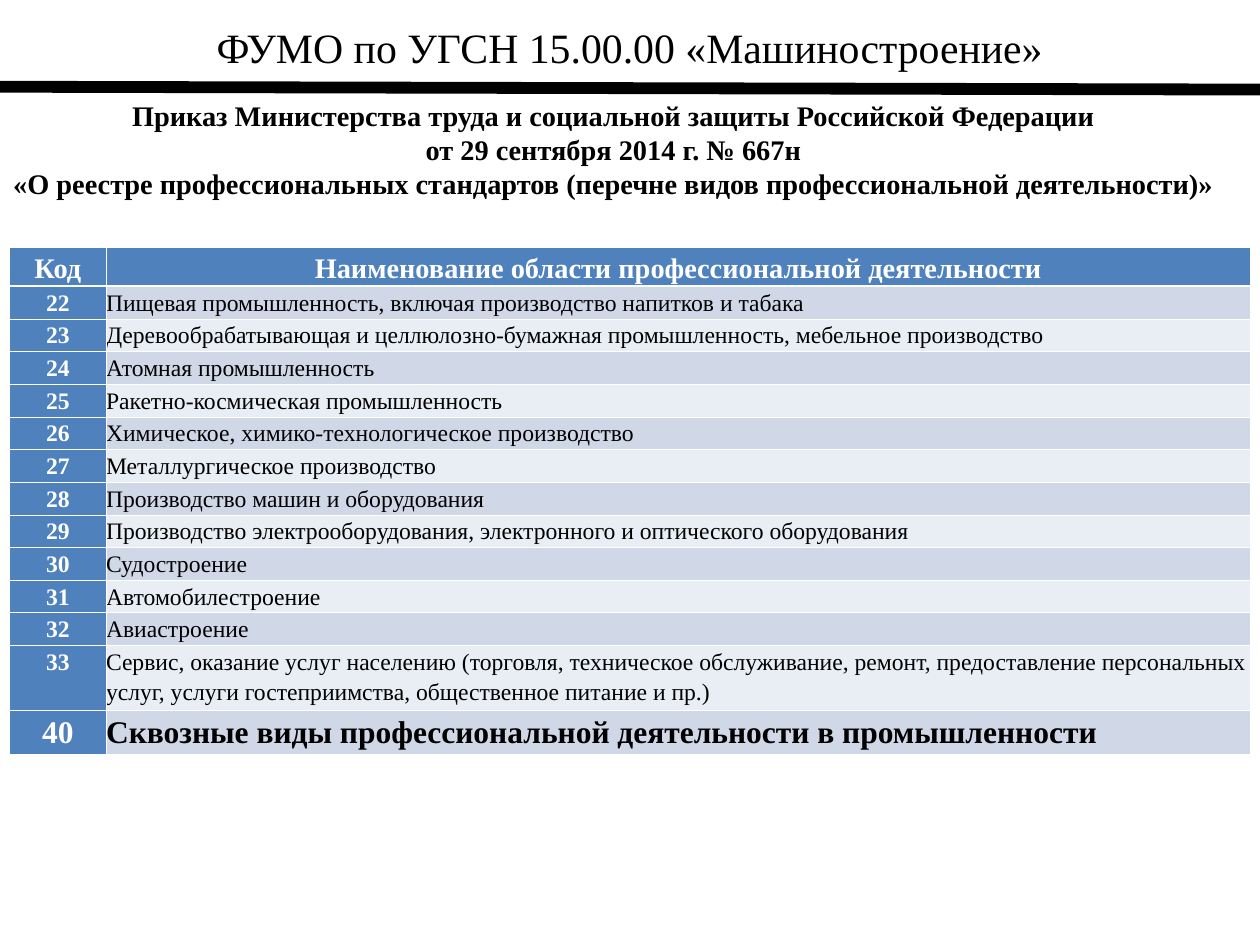
"""Build a slide listing industrial areas of professional activity."""
from dataclasses import dataclass

from lxml.etree import SubElement
from pptx import Presentation
from pptx.dml.color import RGBColor
from pptx.enum.shapes import MSO_CONNECTOR
from pptx.enum.text import MSO_ANCHOR as ANCHOR, PP_ALIGN as ALIGN
from pptx.oxml.ns import qn
from pptx.util import Inches, Pt

COLORS = {"black": "000000", "white": "FFFFFF", "blue": "4F81BD",
          "band": "D0D8E8", "light": "E9EDF4"}
FONT = "Times New Roman"
TABLE_HEIGHT = 8.93
HEADER_HEIGHT, SERVICE_HEIGHT, COMMON_HEIGHT = 0.68, 1.15, 0.76


@dataclass(frozen=True)
class Area:
    code: str
    name: str
    size: int = 30
    bold: bool = False
    height: float = 0


HEADER = Area("Код", "Наименование области профессиональной деятельности",
              36, True, HEADER_HEIGHT)
AREAS = [
    Area("22", "Пищевая промышленность, включая производство напитков и табака"),
    Area("23", "Деревообрабатывающая и целлюлозно-бумажная промышленность, мебельное производство"),
    Area("24", "Атомная промышленность"),
    Area("25", "Ракетно-космическая промышленность"),
    Area("26", "Химическое, химико-технологическое производство"),
    Area("27", "Металлургическое производство"),
    Area("28", "Производство машин и оборудования"),
    Area("29", "Производство электрооборудования, электронного и оптического оборудования"),
    Area("30", "Судостроение"),
    Area("31", "Автомобилестроение"),
    Area("32", "Авиастроение"),
    Area("33", "Сервис, оказание услуг населению (торговля, техническое обслуживание, "
         "ремонт, предоставление персональных услуг, услуги гостеприимства, "
         "общественное питание и пр.)", height=SERVICE_HEIGHT),
    Area("40", "Сквозные виды профессиональной деятельности в промышленности",
         40, True, COMMON_HEIGHT),
]
TITLE = "ФУМО по УГСН 15.00.00 «Машиностроение»"
ORDER = [
    "Приказ Министерства труда и социальной защиты Российской Федерации",
    "от 29 сентября 2014 г. № 667н",
    "«О реестре профессиональных стандартов (перечне видов профессиональной деятельности)»",
]


def rgb(name: str) -> RGBColor:
    return RGBColor.from_string(COLORS[name])


def write(tf, *lines: str, size: int, color: str = "black", bold: bool = False,
          align=ALIGN.CENTER, spacing: float | None = None,
          after: int | None = None) -> None:
    tf.word_wrap = True
    for i, line in enumerate(lines):
        p = tf.add_paragraph() if i else tf.paragraphs[0]
        p.alignment = align
        if spacing is not None:
            p.line_spacing = spacing
        if after is not None:
            p.space_after = Pt(after)
        r = p.add_run()
        r.text = line
        r.font.name, r.font.size, r.font.bold = FONT, Pt(size), bold
        r.font.color.rgb = rgb(color)


def add_text(s, x: float, y: float, w: float, h: float, *lines: str,
             inset: tuple[float, float] = (0.1, 0.05), **fmt) -> None:
    tf = s.shapes.add_textbox(Inches(x), Inches(y), Inches(w), Inches(h)).text_frame
    tf.margin_left = tf.margin_right = Inches(inset[0])
    tf.margin_top = tf.margin_bottom = Inches(inset[1])
    write(tf, *lines, **fmt)


def add_rule(s) -> None:
    line = s.shapes.add_connector(MSO_CONNECTOR.STRAIGHT, Inches(0), Inches(1.53),
                                  Inches(22.22), Inches(1.58))
    line.line.color.rgb = rgb("black")
    line.line.width = Pt(15)
    SubElement(line._element.spPr, qn("a:effectLst"))


def set_borders(cell, top: int = 1, bottom: int = 1) -> None:
    tc_pr = cell._tc.get_or_add_tcPr()
    for side, width in (("L", 1), ("R", 1), ("T", top), ("B", bottom)):
        ln = SubElement(tc_pr, qn(f"a:ln{side}"), w=str(Pt(width)))
        fill = SubElement(ln, qn("a:solidFill"))
        SubElement(fill, qn("a:srgbClr"), val=COLORS["white"])


def fill_row(table, i: int, area: Area, height: float) -> None:
    table.rows[i].height = Inches(height)
    is_header = i == 0
    for j, text in enumerate((area.code, area.name)):
        cell = table.cell(i, j)
        accent = is_header or j == 0
        set_borders(cell, top=3 if i == 1 else 1, bottom=3 if is_header else 1)
        cell.fill.solid()
        cell.fill.fore_color.rgb = rgb(
            "blue" if accent else "band" if i % 2 else "light")
        cell.margin_left = cell.margin_right = 0
        cell.margin_top = cell.margin_bottom = 0
        cell.vertical_anchor = ANCHOR.MIDDLE if is_header else ANCHOR.TOP
        write(cell.text_frame, text, size=area.size, bold=accent or area.bold,
              color="white" if accent else "black",
              align=ALIGN.CENTER if accent else ALIGN.LEFT, spacing=1.15, after=10)


def add_areas(s) -> None:
    rows = [HEADER, *AREAS]
    plain = sum(not area.height for area in rows)
    row_height = (TABLE_HEIGHT - sum(area.height for area in rows)) / plain
    table = s.shapes.add_table(len(rows), 2, Inches(0.17), Inches(4.36),
                               Inches(21.88), Inches(TABLE_HEIGHT)).table
    for col, width in zip(table.columns, (1.7, 20.18)):
        col.width = Inches(width)
    for i, area in enumerate(rows):
        fill_row(table, i, area, area.height or row_height)


def main() -> None:
    prs = Presentation()
    prs.slide_width, prs.slide_height = Inches(22.22), Inches(16.67)
    s = prs.slides.add_slide(prs.slide_layouts[6])
    add_text(s, 0, 0.28, 22.22, 1.12, TITLE, inset=(0.22, 0.11), size=53)
    add_rule(s)
    add_text(s, 0, 1.68, 21.63, 1.92, *ORDER, size=36, bold=True)
    add_areas(s)
    prs.save("out.pptx")


if __name__ == "__main__":
    main()
